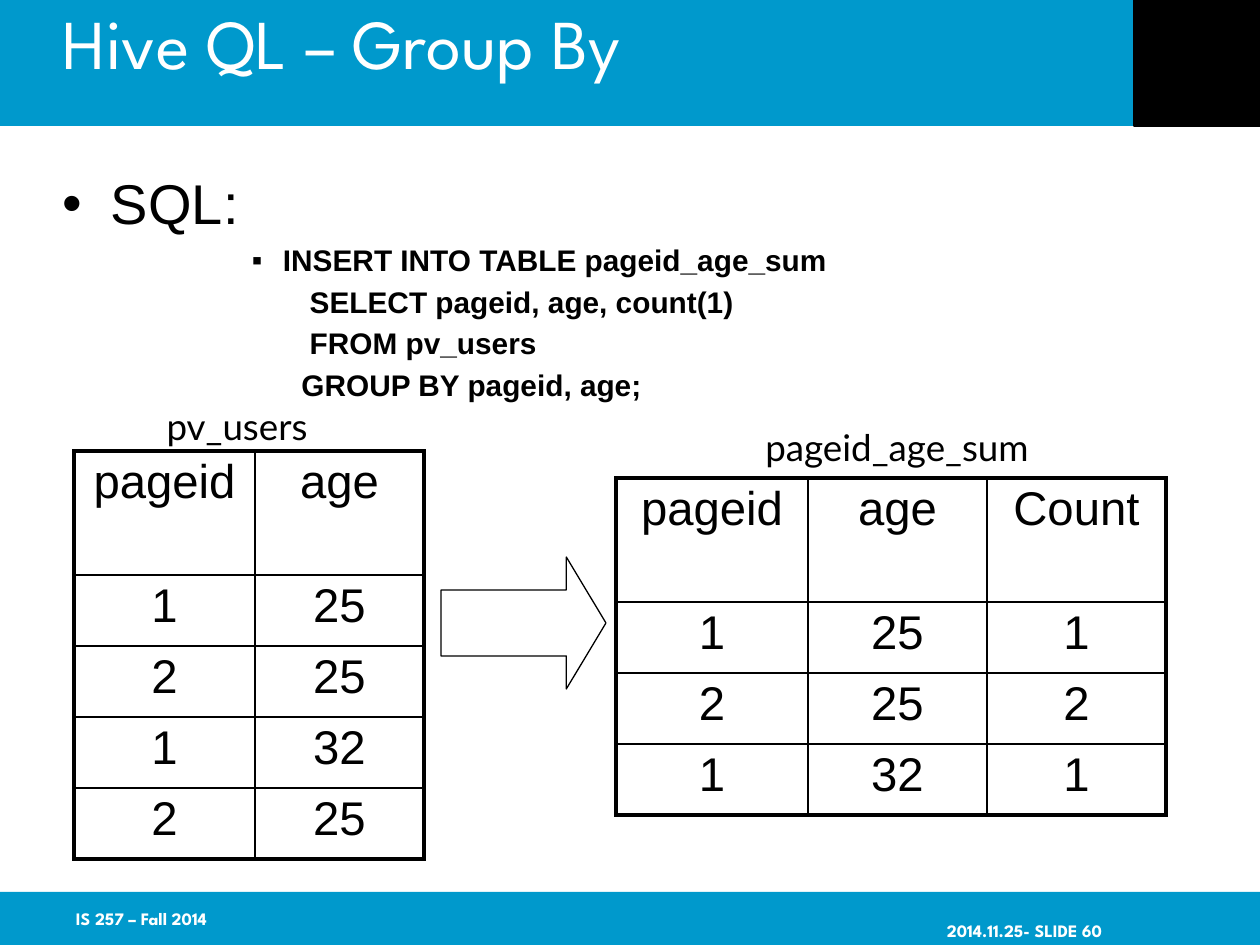
from lxml.etree import SubElement
from pptx import Presentation
from pptx.dml.color import RGBColor
from pptx.enum.shapes import MSO_SHAPE
from pptx.enum.text import MSO_ANCHOR, PP_ALIGN
from pptx.oxml import parse_xml
from pptx.oxml.ns import nsdecls, qn
from pptx.util import Emu, Pt

PX = 914400 // 126
BLUE, BLACK, WHITE = "0099CC", "000000", "FFFFFF"
TITLE = dict(name="League Spartan", size=40, color=WHITE)
FOOTER = dict(name="League Spartan", size=10, color=WHITE, bold=True)
LABEL = dict(name="Lato", size=21, color=BLACK)
HEADING = dict(name="Arial", size=32, color=BLACK)
CODE = dict(name="Arial", size=17, color=BLACK, bold=True)
CELL = dict(name="Arial", size=27, color=BLACK)

# shape, box, fill, line
SHAPES = [
    (MSO_SHAPE.RECTANGLE, (0, 0, 1260, 126), BLUE, None),
    (MSO_SHAPE.RECTANGLE, (0, 892, 1260, 53), BLUE, None),
    (MSO_SHAPE.RECTANGLE, (1134, 0, 126, 126), BLACK, BLACK),
    (MSO_SHAPE.RIGHT_ARROW, (441, 557, 165, 132), WHITE, BLACK),
]
# box, insets, anchor, wrap, alignment, text, format
TEXTS = [
    ((63, 0, 1071, 126), (0, 0, 0, 0), MSO_ANCHOR.TOP, True, PP_ALIGN.LEFT,
     "Hive QL – Group By", TITLE),
    ((152, 399, 170, 54), (10, 5, 10, 5), MSO_ANCHOR.TOP, False, PP_ALIGN.CENTER,
     "pv_users", LABEL),
    ((745, 420, 304, 54), (10, 5, 10, 5), MSO_ANCHOR.TOP, False, PP_ALIGN.CENTER,
     "pageid_age_sum", LABEL),
    ((63, 892, 262, 53), (13, 6, 0, 6), MSO_ANCHOR.MIDDLE, True, PP_ALIGN.LEFT,
     "IS 257 – Fall 2014", FOOTER),
    ((885, 892, 312, 53), (13, 24, 95, 0), MSO_ANCHOR.MIDDLE, True, PP_ALIGN.RIGHT,
     "2014.11.25- SLIDE 60", FOOTER),
]
# text, left margin, indent, bullet, space before (pt), format
BODY_BOX, BODY_INSETS = (63, 168, 1134, 683), (0, 1, 0, 0)
BODY = [
    ("SQL:", 48, -48, "•", 0, HEADING),
    ("INSERT INTO TABLE pageid_age_sum", 220, -31, "▪", 3.3, CODE),
    ("       SELECT pageid, age, count(1)", 189, 0, None, 3.3, CODE),
    ("       FROM pv_users", 189, 0, None, 3.3, CODE),
    ("      GROUP BY pageid, age;", 189, 0, None, 3.3, CODE),
]
HEADER_HEIGHT, ROW_HEIGHT = 124, 71
# left, top, column widths, rows
TABLES = [
    (74, 451, (181, 169),
     [("pageid", "age"), ("1", "25"), ("2", "25"), ("1", "32"), ("2", "25")]),
    (616, 478, (192, 179, 179),
     [("pageid", "age", "Count"), ("1", "25", "1"), ("2", "25", "2"), ("1", "32", "1")]),
]


def px(*values):
    return [Emu(v * PX) for v in values]


def rgb(value):
    return RGBColor.from_string(value)


def style(font, fmt):
    for key, value in fmt.items():
        if key == "color":
            font.color.rgb = rgb(value)
        else:
            setattr(font, key, Pt(value) if key == "size" else value)


def set_margins(target, insets):
    for side, value in zip(("left", "top", "right", "bottom"), px(*insets)):
        setattr(target, f"margin_{side}", value)


def add_run(p, text, fmt):
    r = p.add_run()
    r.text = text
    style(r.font, fmt)


def add_frame(slide, box, insets, anchor=MSO_ANCHOR.TOP, wrap=True):
    tf = slide.shapes.add_textbox(*px(*box)).text_frame
    set_margins(tf, insets)
    tf.vertical_anchor, tf.word_wrap = anchor, wrap
    return tf


def add_shape(slide, kind, box, fill, line):
    sp = slide.shapes.add_shape(kind, *px(*box))
    sp.shadow.inherit = False
    sp.fill.solid()
    sp.fill.fore_color.rgb = rgb(fill)
    if line:
        sp.line.color.rgb = rgb(line)
        sp.line.width = Pt(0.75)
    else:
        sp.line.fill.background()
    if kind == MSO_SHAPE.RIGHT_ARROW:
        sp.adjustments[0], sp.adjustments[1] = 0.5, 0.3


def add_body(slide):
    tf = add_frame(slide, BODY_BOX, BODY_INSETS)
    for i, (text, margin, indent, bullet, before, fmt) in enumerate(BODY):
        p = tf.add_paragraph() if i else tf.paragraphs[0]
        pPr = p._p.get_or_add_pPr()
        pPr.set("marL", str(margin * PX))
        pPr.set("indent", str(indent * PX))
        if bullet:
            SubElement(pPr, qn("a:buFont"), typeface="Arial")
            SubElement(pPr, qn("a:buChar"), char=bullet)
        else:
            SubElement(pPr, qn("a:buNone"))
        if before:
            p.space_before = Pt(before)
        add_run(p, text, fmt)


def format_cell(cell, thick):
    """Give a half-transparent fill and borders, heavier on the outer (thick) sides."""
    tcPr = cell._tc.get_or_add_tcPr()
    for side in "LRTB":
        width = Pt(2.25 if side in thick else 1)
        tcPr.append(parse_xml(
            f'<a:ln{side} {nsdecls("a")} w="{width}"><a:solidFill>'
            f'<a:srgbClr val="{BLACK}"/></a:solidFill></a:ln{side}>'))
    cell.fill.solid()
    cell.fill.fore_color.rgb = rgb(WHITE)
    fill_color = tcPr.find(qn("a:solidFill")).find(qn("a:srgbClr"))
    SubElement(fill_color, qn("a:alpha"), val="50000")


def add_table(slide, left, top, widths, rows):
    heights = [HEADER_HEIGHT] + [ROW_HEIGHT] * (len(rows) - 1)
    box = px(left, top, sum(widths), sum(heights))
    table = slide.shapes.add_table(len(rows), len(widths), *box).table
    table.first_row = table.horz_banding = False
    for col, width in zip(table.columns, px(*widths)):
        col.width = width
    for row, height in zip(table.rows, px(*heights)):
        row.height = height
    for i, row in enumerate(rows):
        for j, text in enumerate(row):
            cell = table.cell(i, j)
            set_margins(cell, (9, 5, 9, 5))
            outer = dict(L=j == 0, R=j == len(row) - 1, T=i == 0, B=i == len(rows) - 1)
            format_cell(cell, [side for side, edge in outer.items() if edge])
            p = cell.text_frame.paragraphs[0]
            p.alignment = PP_ALIGN.CENTER
            add_run(p, text, CELL)


def main():
    prs = Presentation()
    prs.slide_width, prs.slide_height = px(1260, 945)
    slide = prs.slides.add_slide(prs.slide_layouts[6])
    for shape in SHAPES:
        add_shape(slide, *shape)
    add_body(slide)
    for table in TABLES:
        add_table(slide, *table)
    for box, insets, anchor, wrap, align, text, fmt in TEXTS:
        p = add_frame(slide, box, insets, anchor, wrap).paragraphs[0]
        p.alignment = align
        add_run(p, text, fmt)
    prs.save("out.pptx")


if __name__ == "__main__":
    main()
